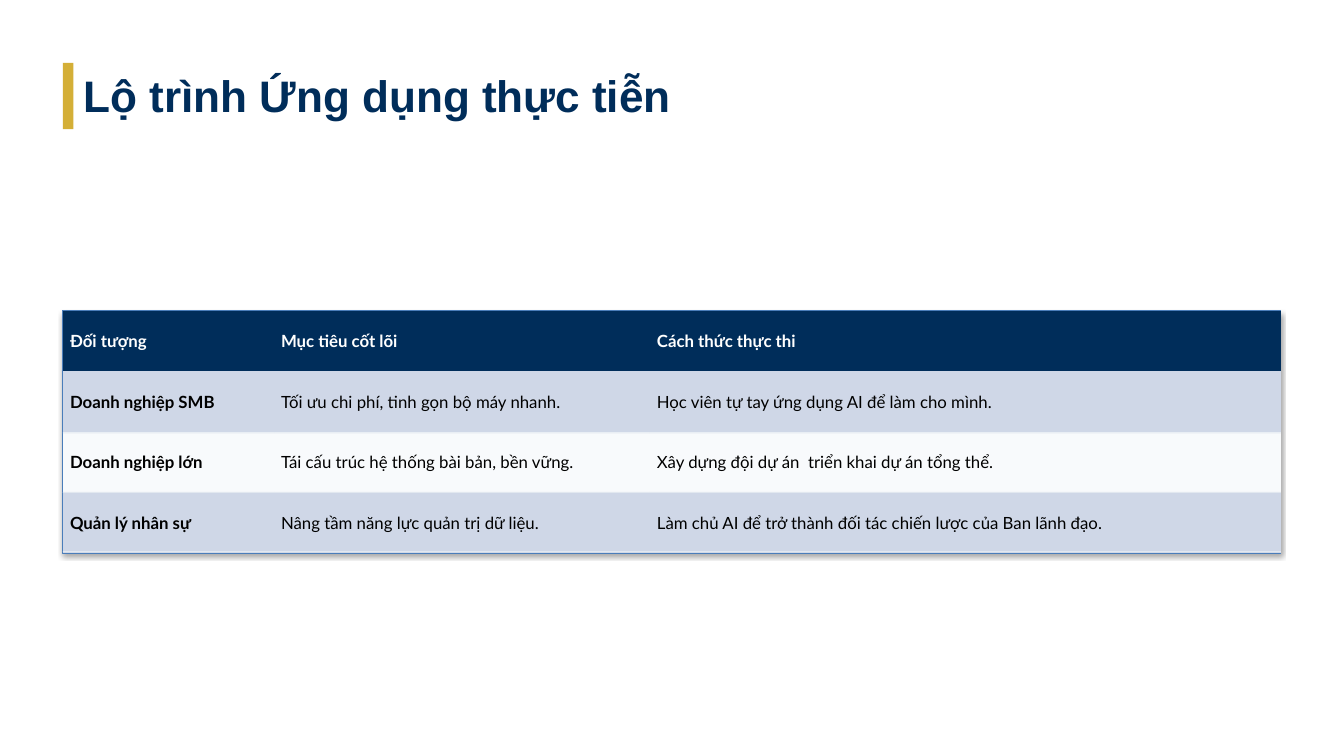
from pptx import Presentation
from pptx.dml.color import RGBColor
from pptx.enum.shapes import MSO_SHAPE
from pptx.enum.text import MSO_ANCHOR, PP_ALIGN
from pptx.oxml.ns import qn
from pptx.util import Inches, Pt

RECTANGLE = MSO_SHAPE.RECTANGLE
ROUNDED = MSO_SHAPE.ROUNDED_RECTANGLE
TOP, MIDDLE = MSO_ANCHOR.TOP, MSO_ANCHOR.MIDDLE
LEFT = PP_ALIGN.LEFT

NAVY = RGBColor(0x00, 0x2D, 0x5A)
GOLD = RGBColor(0xD4, 0xAF, 0x37)
BLUE = RGBColor(0x4A, 0x7D, 0xBA)
BAND = RGBColor(0xCF, 0xD7, 0xE7)
PALE = RGBColor(0xF8, 0xFA, 0xFC)
RULE = RGBColor(0xE2, 0xE8, 0xF0)
WHITE = RGBColor(0xFF, 0xFF, 0xFF)
BLACK = RGBColor(0x00, 0x00, 0x00)

PLAIN_TABLE = "{2D5ABB26-0587-4C30-8999-92F81FD0307C}"
GRID_COLUMNS = 128
TITLE_LAYOUT = 5

MARGIN = 6
TABLE_TOP = 29.6
ROW_HEIGHT = 5.78
COLUMN_WIDTHS = [20.1, 35.8, 60.1]
FIRST_RULE, RULE_STEP, RULE_COUNT = 41.2, 5.65, 3

ROADMAP = [
    ["Đối tượng", "Mục tiêu cốt lõi", "Cách thức thực thi"],
    ["Doanh nghiệp SMB", "Tối ưu chi phí, tinh gọn bộ máy nhanh.",
     "Học viên tự tay ứng dụng AI để làm cho mình."],
    ["Doanh nghiệp lớn", "Tái cấu trúc hệ thống bài bản, bền vững.",
     "Xây dựng đội dự án  triển khai dự án tổng thể."],
    ["Quản lý nhân sự", "Nâng tầm năng lực quản trị dữ liệu.",
     "Làm chủ AI để trở thành đối tác chiến lược của Ban lãnh đạo."],
]


class Page:
    """A slide on a square grid, 128 columns by 72 rows."""

    title_font, body_font = "Arial", "Lato"
    title_size, body_size = Pt(31.5), Pt(12)

    def __init__(self, deck):
        self.slide = deck.slides.add_slide(deck.slide_layouts[TITLE_LAYOUT])
        self.unit = deck.slide_width / GRID_COLUMNS

    def grid(self, *counts):
        return [round(count * self.unit) for count in counts]

    def style(self, para, font, size, color, bold):
        para.alignment = LEFT
        for span in para.runs:
            span.font.name = font
            span.font.size = size
            span.font.bold = bold
            span.font.color.rgb = color

    def title(self, text, *place):
        box = self.slide.shapes.title
        box.left, box.top, box.width, box.height = self.grid(*place)
        frame = box.text_frame
        frame.text = text
        frame.word_wrap = True
        frame.vertical_anchor = TOP
        frame.margin_left = frame.margin_right = 0
        frame.margin_top = frame.margin_bottom = 0
        para = frame.paragraphs[0]
        para.line_spacing = 1.1
        self.style(para, self.title_font, self.title_size, NAVY, True)

    def block(self, color, *place):
        box = self.slide.shapes.add_shape(RECTANGLE, *self.grid(*place))
        box.shadow.inherit = False
        box.fill.solid()
        box.fill.fore_color.rgb = color
        box.line.fill.background()

    def card(self, *place):
        """Draw an outlined panel that keeps the theme's soft shadow."""
        box = self.slide.shapes.add_shape(ROUNDED, *self.grid(*place))
        box.adjustments[0] = 0
        box.fill.solid()
        box.fill.fore_color.rgb = WHITE
        box.line.color.rgb = BLUE
        box.line.width = Pt(0.75)

    def table(self, rows, widths, *place):
        frame = self.slide.shapes.add_table(
            len(rows), len(widths), *self.grid(*place))
        for style_id in frame.element.iter(qn("a:tableStyleId")):
            style_id.text = PLAIN_TABLE
        table = frame.table
        for column, width in zip(table.columns, self.grid(*widths)):
            column.width = width
        for row_index, texts in enumerate(rows):
            header = row_index == 0
            fill = NAVY if header else (PALE, BAND)[row_index % 2]
            for column_index, text in enumerate(texts):
                cell = table.cell(row_index, column_index)
                cell.fill.solid()
                cell.fill.fore_color.rgb = fill
                cell.vertical_anchor = MIDDLE
                cell.margin_left = cell.margin_right = Inches(0.07)
                cell.margin_top = cell.margin_bottom = Inches(0.03)
                cell.text_frame.text = text
                self.style(cell.text_frame.paragraphs[0], self.body_font,
                           self.body_size, WHITE if header else BLACK,
                           header or column_index == 0)


def main():
    deck = Presentation()
    deck.slide_width, deck.slide_height = Inches(13.33), Inches(7.5)
    page = Page(deck)

    place = MARGIN, TABLE_TOP, sum(COLUMN_WIDTHS), ROW_HEIGHT * len(ROADMAP)
    page.card(*place)
    page.table(ROADMAP, COLUMN_WIDTHS, *place)
    for index in range(RULE_COUNT):
        top = FIRST_RULE + index * RULE_STEP
        for column, width in enumerate(COLUMN_WIDTHS):
            left = MARGIN + sum(COLUMN_WIDTHS[:column])
            page.block(RULE, left, top, width, 0.1)

    page.title("Lộ trình Ứng dụng thực tiễn", 8, MARGIN, 119.7, 5.1)
    page.block(GOLD, MARGIN, MARGIN, 1, 6.3)
    deck.save("out.pptx")


if __name__ == "__main__":
    main()
